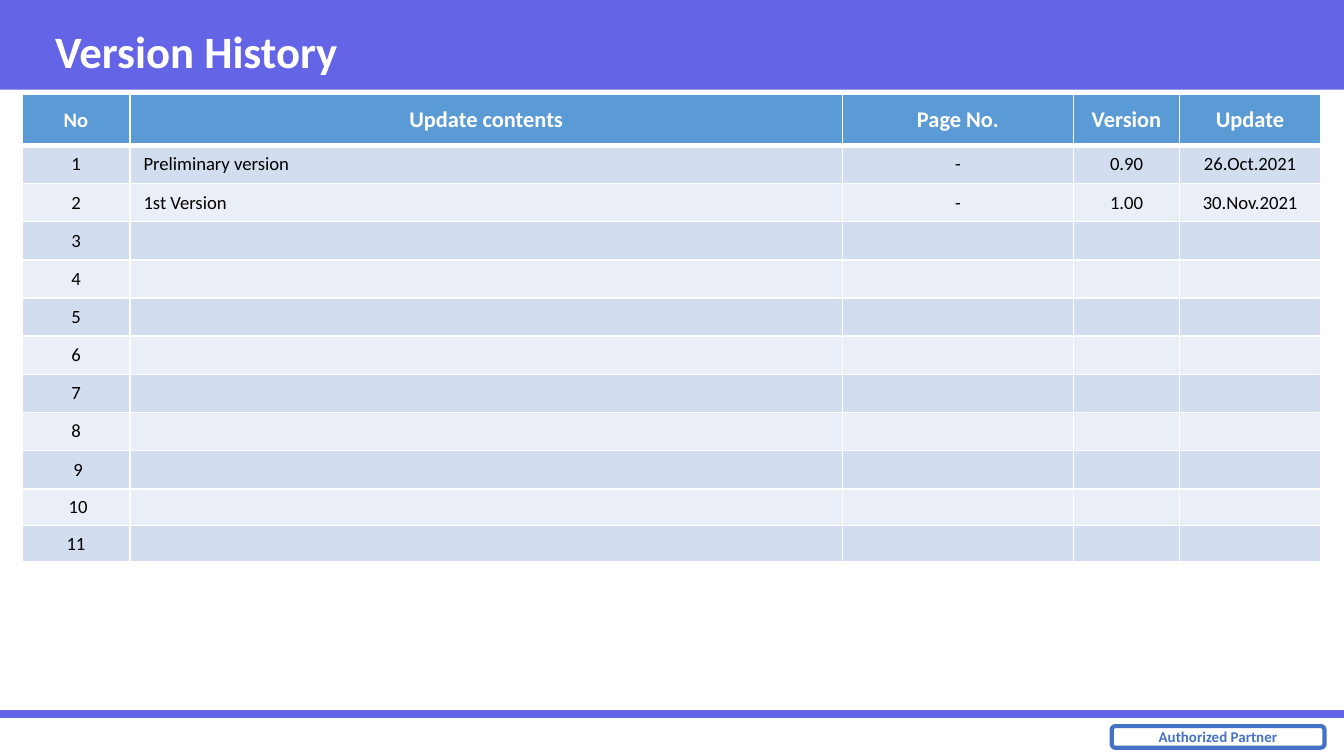
"""Builds the version history slide."""
from lxml import etree
from pptx import Presentation
from pptx import util as u
from pptx.dml.color import RGBColor
from pptx.enum import shapes, text
from pptx.oxml import ns

Pt = u.Pt
VIOLET, BLUE, WHITE = "6464E6", "4472C4", "FFFFFF"
CENTER, LEFT = text.PP_ALIGN.CENTER, text.PP_ALIGN.LEFT


def color(value):
    """Turns a hex string into a colour."""
    return RGBColor.from_string(value)


def write(para, words, size, ink, bold, align):
    """Adds one formatted run to a paragraph."""
    para.alignment = align
    span = para.add_run()
    span.text = words
    span.font.name = "Calibri"
    span.font.size = Pt(size)
    span.font.bold = bold
    span.font.color.rgb = color(ink)


deck = Presentation()
deck.slide_width, deck.slide_height = Pt(720), Pt(405)
page = deck.slides.add_slide(deck.slide_layouts[5])

band = page.shapes.add_shape(shapes.MSO_SHAPE.RECTANGLE, 0, 0, Pt(720), Pt(48))
band.shadow.inherit = False
band.fill.solid()
band.fill.fore_color.rgb = color(VIOLET)
band.line.fill.background()

footer = page.shapes.add_connector(
    shapes.MSO_CONNECTOR.STRAIGHT, 0, Pt(382.5), Pt(720), Pt(382.5))
footer.line.color.rgb = color(VIOLET)
footer.line.width = Pt(4.5)
etree.SubElement(footer._element.spPr, ns.qn("a:effectLst"))

badge = page.shapes.add_shape(
    shapes.MSO_SHAPE.ROUNDED_RECTANGLE, Pt(595.6), Pt(389), Pt(114), Pt(11.6))
badge.shadow.inherit = False
badge.fill.background()
badge.line.color.rgb = color(BLUE)
badge.line.width = Pt(2.25)
badge.text_frame.word_wrap = False
badge.text_frame.vertical_anchor = text.MSO_ANCHOR.MIDDLE
write(badge.text_frame.paragraphs[0], "Authorized Partner", 8, BLUE, True, CENTER)

title = page.shapes.title
page.shapes._spTree.append(title._element)
title.left, title.top, title.width, title.height = Pt(22.3), Pt(6), Pt(667), Pt(42)
title.text_frame.vertical_anchor = text.MSO_ANCHOR.MIDDLE
write(title.text_frame.paragraphs[0], "Version History", 24, WHITE, True, LEFT)

numbers = ["1", "2", "3", "4", "5", "6", "7", "8", " 9", " 10", "11"]
details = {
    "1": ["Preliminary version", "-", "0.90", "26.Oct.2021"],
    "2": ["1st Version", "-", "1.00", "30.Nov.2021"],
}
rows = [["No", "Update contents", "Page No.", "Version", "Update"]]
rows += [[number] + details.get(number, [""] * 4) for number in numbers]
widths = [58, 381.6, 123.8, 56.8, 75.6]
heights = [27.2] + [20.45] * 9 + [19.6, 19.8]

frame = page.shapes.add_table(
    len(rows), len(widths), Pt(11.7), Pt(50.7), Pt(sum(widths)), Pt(sum(heights)))
table = frame.table
table.horz_banding = False
for column, width in zip(table.columns, widths):
    column.width = Pt(width)

for row, (words_list, height) in enumerate(zip(rows, heights)):
    table.rows[row].height = Pt(height)
    header = row == 0
    for col, words in enumerate(words_list):
        cell = table.cell(row, col)
        cell.vertical_anchor = text.MSO_ANCHOR.MIDDLE
        cell.fill.solid()
        cell.fill.fore_color.rgb = color(
            "5B9BD5" if header else "D2DEEF" if row % 2 else "EAEFF7")
        para = cell.text_frame.paragraphs[0]
        if words:
            size = 10 if not header else 11 if col == 0 else 12
            align = LEFT if col == 1 and not header else CENTER
            write(para, words, size, WHITE if header else "000000", header, align)
        else:
            para._p.get_or_add_endParaRPr().set("sz", "1000")
        properties = cell._tc.get_or_add_tcPr()
        for place, side in enumerate(["lnL", "lnR", "lnT", "lnB"]):
            thick = (row, side) in [(0, "lnB"), (1, "lnT")]
            border = etree.Element(ns.qn("a:" + side), w=str(Pt(3 if thick else 1)))
            fill = etree.SubElement(border, ns.qn("a:solidFill"))
            etree.SubElement(fill, ns.qn("a:srgbClr"), val=WHITE)
            properties.insert(place, border)

deck.save("out.pptx")
